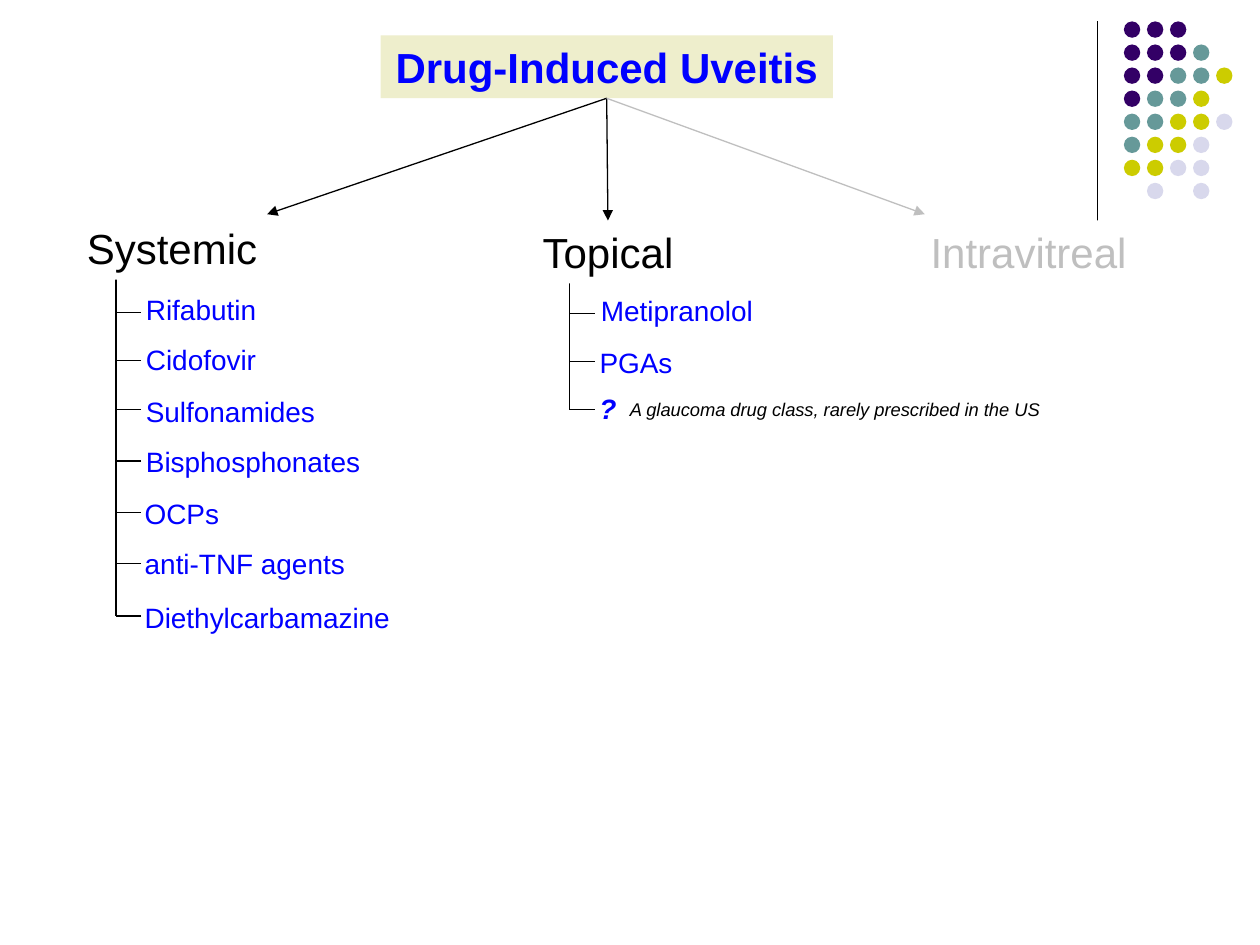
from dataclasses import dataclass

from lxml import etree
from pptx import Presentation
from pptx.dml.color import RGBColor
from pptx.enum.shapes import MSO_CONNECTOR, MSO_SHAPE
from pptx.enum.text import MSO_ANCHOR, PP_ALIGN
from pptx.oxml.ns import qn
from pptx.util import Inches, Pt

LINE = MSO_CONNECTOR.STRAIGHT
RECT, OVAL = MSO_SHAPE.RECTANGLE, MSO_SHAPE.OVAL
LEFT, MID, RIGHT = PP_ALIGN.LEFT, PP_ALIGN.CENTER, PP_ALIGN.RIGHT
TOP, CENTER = MSO_ANCHOR.TOP, MSO_ANCHOR.MIDDLE

HUES = {
    "black": "000000", "white": "FFFFFF", "gray": "BFBFBF",
    "blue": "0000FF", "cream": "EEEECC",
    "P": "330066", "T": "669999", "Y": "CCCC00", "L": "D8D8EC",
}
DOTS = ["PPP", "PPPT", "PPTTY", "PTTY", "TTYYL", "TYYL", "YYLL", " L L"]


@dataclass
class Style:
    size: float
    hue: str
    align: PP_ALIGN = LEFT
    bold: bool = False
    ital: bool = False


@dataclass
class Head:
    text: str
    box: tuple
    style: Style


@dataclass
class Drug:
    text: str
    x: float
    y: float
    width: float
    tick: float
    style: Style


@dataclass
class Branch:
    stem: float
    top: float
    drugs: list[Drug]


ITEM = Style(16, "blue")
QUERY = Style(16, "blue", bold=True, ital=True)
NOTE = Style(10.5, "black", ital=True)

HEADS = [
    Head("Systemic", (0.57, 1.72, 1.57, 0.5), Style(24, "black", RIGHT)),
    Head("Topical", (4.2, 1.75, 1.25, 0.5), Style(24, "black", MID)),
    Head("Intravitreal", (7.27, 1.75, 1.77, 0.5), Style(24, "gray", RIGHT)),
]
BRANCHES = [
    Branch(0.92, 2.06, [
        Drug("Rifabutin", 1.06, 2.27, 1.09, 2.48, ITEM),
        Drug("Cidofovir", 1.06, 2.67, 1.09, 2.86, ITEM),
        Drug("Sulfonamides", 1.06, 3.08, 1.56, 3.25, ITEM),
        Drug("Bisphosphonates", 1.06, 3.48, 1.92, 3.66, ITEM),
        Drug("OCPs", 1.05, 3.89, 0.8, 4.07, ITEM),
        Drug("anti-TNF agents", 1.05, 4.29, 1.81, 4.47, ITEM),
        Drug("Diethylcarbamazine", 1.05, 4.72, 2.17, 4.89, ITEM),
    ]),
    Branch(4.52, 2.07, [
        Drug("Metipranolol", 4.67, 2.28, 1.42, 2.49, ITEM),
        Drug("PGAs", 4.66, 2.69, 0.79, 2.87, ITEM),
        Drug("?", 4.66, 3.06, 0.34, 3.25, QUERY),
    ]),
]


def color(name: str) -> RGBColor:
    return RGBColor.from_string(HUES[name])


def paint(shape, hue: str) -> None:
    shape.fill.solid()
    shape.fill.fore_color.rgb = color(hue)
    shape.line.fill.background()


def write(shape, text: str, style: Style, wrap=False, anchor=TOP) -> None:
    frame = shape.text_frame
    frame.text = text
    frame.word_wrap = wrap
    frame.vertical_anchor = anchor
    para = frame.paragraphs[0]
    para.alignment = style.align
    font = para.font
    font.name, font.size = "Arial", Pt(style.size)
    font.bold, font.italic = style.bold, style.ital
    font.color.rgb = color(style.hue)


def add_line(shapes, start: tuple, end: tuple, hue="black", arrow=False):
    line = shapes.add_connector(LINE, *map(Inches, start + end))
    line.line.color.rgb = color(hue)
    line.line.width = Pt(0.75)
    props = line._element.spPr
    if arrow:
        etree.SubElement(props.find(qn("a:ln")), qn("a:tailEnd"), type="triangle")
    etree.SubElement(props, qn("a:effectLst"))
    return line


def add_shape(shapes, kind: MSO_SHAPE, box: tuple, hue: str):
    shape = shapes.add_shape(kind, *map(Inches, box))
    shape.shadow.inherit = False
    paint(shape, hue)
    return shape


def add_text(shapes, box: tuple, text: str, style: Style, wrap=False, anchor=TOP):
    write(shapes.add_textbox(*map(Inches, box)), text, style, wrap, anchor)


def add_dots(shapes) -> None:
    add_line(shapes, (8.71, 0.17), (8.71, 1.83))
    step = 0.183
    for row, marks in enumerate(DOTS):
        for col, mark in enumerate(marks):
            if mark != " ":
                box = (8.92 + col * step, 0.17 + row * step, 0.13, 0.13)
                add_shape(shapes, OVAL, box, mark)


def add_title(shapes):
    title = shapes.title
    title.left, title.top = Inches(3.02), Inches(0.28)
    title.width, title.height = Inches(3.59), Inches(0.5)
    paint(title, "cream")
    write(title, "Drug-Induced Uveitis", Style(24, "blue", MID, bold=True))
    return title


def add_branch(shapes, branch: Branch) -> None:
    stem = branch.stem
    add_line(shapes, (stem, branch.top), (stem, branch.drugs[-1].tick))
    for drug in branch.drugs:
        add_line(shapes, (stem + 0.2, drug.tick), (stem, drug.tick))
        add_text(shapes, (drug.x, drug.y, drug.width, 0.37), drug.text, drug.style)


def main() -> None:
    deck = Presentation()
    deck.slide_width, deck.slide_height = Inches(10), Inches(7.5)
    shapes = deck.slides.add_slide(deck.slide_layouts[5]).shapes

    add_dots(shapes)
    title = add_title(shapes)
    for branch in BRANCHES:
        add_branch(shapes, branch)

    tips = [(2.12, 1.7), (4.82, 1.75), (7.34, 1.7)]
    for head, tip in zip(HEADS, tips):
        box = add_shape(shapes, RECT, head.box, "white")
        write(box, head.text, head.style)
        arrow = add_line(shapes, (4.82, 0.78), tip, head.style.hue, arrow=True)
        arrow.begin_connect(title, 2)
        if head.text == "Topical":
            arrow.end_connect(box, 0)

    add_text(shapes, (4.9, 3.09, 4.58, 0.31),
             "A glaucoma drug class, rarely prescribed in the US",
             NOTE, wrap=True, anchor=CENTER)
    deck.save("out.pptx")


if __name__ == "__main__":
    main()
